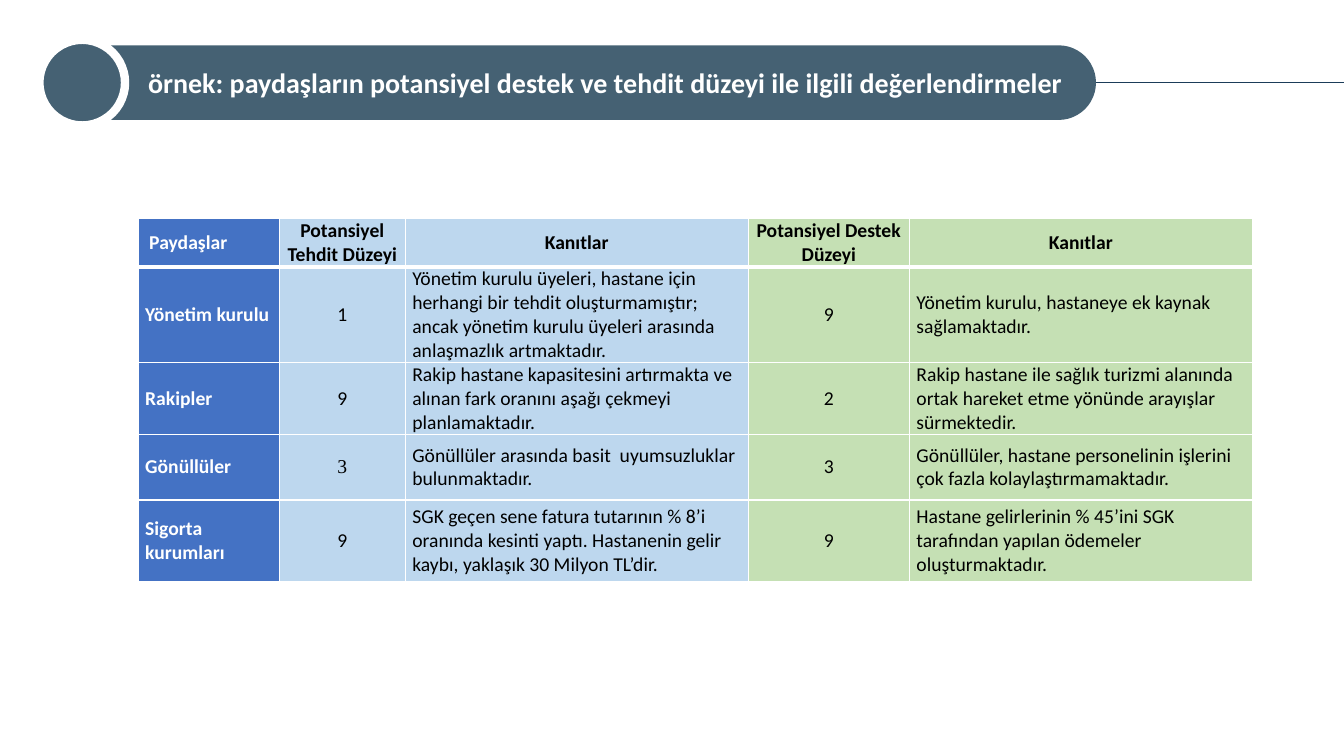
"""Build a slide rating each stakeholder's potential threat and support."""
from dataclasses import dataclass

from lxml.etree import SubElement
from pptx import Presentation
from pptx.dml.color import RGBColor
from pptx.enum.shapes import MSO_CONNECTOR, MSO_SHAPE
from pptx.enum.text import MSO_ANCHOR, PP_ALIGN
from pptx.oxml import parse_xml
from pptx.oxml.ns import nsdecls, qn
from pptx.util import Inches, Pt

TITLE = "örnek: paydaşların potansiyel destek ve tehdit düzeyi ile ilgili değerlendirmeler"
HEADER = ("Paydaşlar", "Potansiyel Tehdit Düzeyi", "Kanıtlar", "Potansiyel Destek Düzeyi", "Kanıtlar")
STAKEHOLDERS = [
    ("Yönetim kurulu", "1",
     "Yönetim kurulu üyeleri, hastane için herhangi bir tehdit oluşturmamıştır; "
     "ancak yönetim kurulu üyeleri arasında anlaşmazlık artmaktadır.",
     "9", "Yönetim kurulu, hastaneye ek kaynak sağlamaktadır."),
    ("Rakipler", "9",
     "Rakip hastane kapasitesini artırmakta ve alınan fark oranını aşağı çekmeyi planlamaktadır.",
     "2", "Rakip hastane ile sağlık turizmi alanında ortak hareket etme yönünde arayışlar sürmektedir."),
    ("Gönüllüler", "3",
     "Gönüllüler arasında basit  uyumsuzluklar bulunmaktadır.",
     "3", "Gönüllüler, hastane personelinin işlerini çok fazla kolaylaştırmamaktadır."),
    ("Sigorta kurumları", "9",
     "SGK geçen sene fatura tutarının % 8’i oranında kesinti yaptı. "
     "Hastanenin gelir kaybı, yaklaşık 30 Milyon TL’dir.",
     "9", "Hastane gelirlerinin % 45’ini SGK tarafından yapılan ödemeler oluşturmaktadır."),
]
COLUMN_WIDTHS = (1.4, 1.25, 3.4, 1.6, 3.4)
ROW_HEIGHTS = (0.48, 0.95, 0.7, 0.65, 0.81)
SCORE_COLUMNS = (1, 3)
SERIF_CELL = (3, 1)
SLIDE_WIDTH, SLIDE_HEIGHT = 13.33, 7.5
TABLE_LEFT, TABLE_TOP = 1.37, 2.17
BANNER_LEFT, BANNER_MIDDLE, BANNER_WIDTH, BANNER_HEIGHT = 0.39, 0.82, 10.48, 0.74
CIRCLE_SIZE = 0.85


@dataclass(frozen=True)
class Theme:
    """Colours, fonts and type sizes of the slide."""
    font: str = "Calibri"
    serif: str = "Times New Roman"
    title_size: int = 20
    table_size: int = 14
    white: str = "FFFFFF"
    black: str = "000000"
    banner: str = "456173"
    rule: str = "1B3C59"
    columns: tuple = ("4472C4", "BDD7EE", "BDD7EE", "C5E0B4", "C5E0B4")


THEME = Theme()


def paint(target, color):
    """Give a shape or cell a solid fill."""
    target.fill.solid()
    target.fill.fore_color.rgb = RGBColor.from_string(color)


def format_text(text_frame, size, color, bold, font=THEME.font, align=PP_ALIGN.LEFT):
    """Format every run of a text frame."""
    for paragraph in text_frame.paragraphs:
        paragraph.alignment = align
        for run in paragraph.runs:
            run.font.name = font
            run.font.size = Pt(size)
            run.font.bold = bold
            run.font.color.rgb = RGBColor.from_string(color)


def add_borders(cell, row):
    """Draw white cell borders, with a heavier one below the header."""
    heavy_side = {0: "B", 1: "T"}.get(row)
    properties = cell._tc.get_or_add_tcPr()
    for position, side in enumerate("LRTB"):
        width = Pt(3 if side == heavy_side else 1)
        border = parse_xml(
            f'<a:ln{side} {nsdecls("a")} w="{width}"><a:solidFill>'
            f'<a:srgbClr val="{THEME.white}"/></a:solidFill></a:ln{side}>')
        properties.insert(position, border)


def add_shape(slide, kind, left, width, height):
    """Add a banner-coloured shape centred on the banner's middle line."""
    top = BANNER_MIDDLE - height / 2
    shape = slide.shapes.add_shape(kind, Inches(left), Inches(top), Inches(width), Inches(height))
    shape.shadow.inherit = False
    paint(shape, THEME.banner)
    return shape


def add_banner(slide):
    """Add the title banner, its circle and the rule to the slide's edge."""
    banner = add_shape(slide, MSO_SHAPE.ROUNDED_RECTANGLE, BANNER_LEFT, BANNER_WIDTH, BANNER_HEIGHT)
    banner.adjustments[0] = 0.5
    banner.line.fill.background()
    text_frame = banner.text_frame
    text_frame.text = TITLE
    text_frame.word_wrap = True
    text_frame.vertical_anchor = MSO_ANCHOR.MIDDLE
    text_frame.margin_left = Inches(0.97)
    format_text(text_frame, THEME.title_size, THEME.white, True)

    circle = add_shape(slide, MSO_SHAPE.OVAL, BANNER_LEFT, CIRCLE_SIZE, CIRCLE_SIZE)
    circle.line.color.rgb = RGBColor.from_string(THEME.white)
    circle.line.width = Pt(6)

    middle = Inches(BANNER_MIDDLE)
    rule = slide.shapes.add_connector(
        MSO_CONNECTOR.STRAIGHT, Inches(BANNER_LEFT + BANNER_WIDTH), middle, Inches(SLIDE_WIDTH), middle)
    rule.begin_connect(banner, 3)
    rule.line.color.rgb = RGBColor.from_string(THEME.rule)
    rule.line.width = Pt(0.5)
    SubElement(rule._element.spPr, qn("a:effectLst"))


def format_cell(cell, row, column):
    """Style one cell by its place in the table."""
    cell.vertical_anchor = MSO_ANCHOR.MIDDLE
    cell.margin_left = Inches(0.11 if row == column == 0 else 0.07)
    cell.margin_right = Inches(0.07)
    cell.margin_top = cell.margin_bottom = 0
    paint(cell, THEME.columns[column])
    add_borders(cell, row)
    centred = column in SCORE_COLUMNS or (row == 0 and column > 0)
    format_text(
        cell.text_frame, THEME.table_size,
        color=THEME.black if column else THEME.white,
        bold=row == 0 or column == 0,
        font=THEME.serif if (row, column) == SERIF_CELL else THEME.font,
        align=PP_ALIGN.CENTER if centred else PP_ALIGN.LEFT)


def add_stakeholder_table(slide):
    """Add the table of stakeholders, scores and evidence."""
    table = slide.shapes.add_table(
        len(ROW_HEIGHTS), len(COLUMN_WIDTHS), Inches(TABLE_LEFT), Inches(TABLE_TOP),
        Inches(sum(COLUMN_WIDTHS)), Inches(sum(ROW_HEIGHTS))).table
    for column, width in zip(table.columns, COLUMN_WIDTHS):
        column.width = Inches(width)
    for row, height in zip(table.rows, ROW_HEIGHTS):
        row.height = Inches(height)
    for row, texts in enumerate([HEADER, *STAKEHOLDERS]):
        for column, text in enumerate(texts):
            cell = table.cell(row, column)
            cell.text_frame.text = text
            format_cell(cell, row, column)


def main():
    """Build and save the presentation."""
    presentation = Presentation()
    presentation.slide_width = Inches(SLIDE_WIDTH)
    presentation.slide_height = Inches(SLIDE_HEIGHT)
    slide = presentation.slides.add_slide(presentation.slide_layouts[6])
    add_stakeholder_table(slide)
    add_banner(slide)
    presentation.save("out.pptx")


if __name__ == "__main__":
    main()
